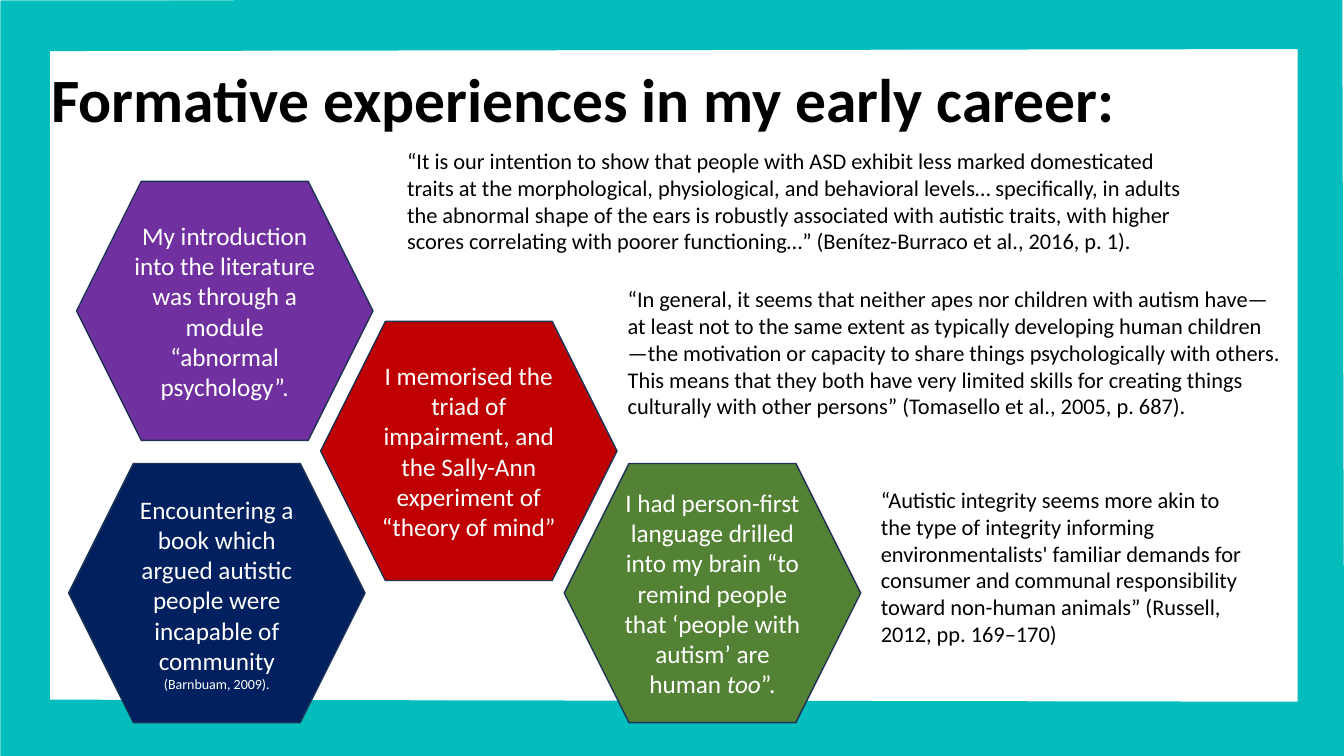
import pptx
import pptx.dml.color
import pptx.enum.shapes
import pptx.enum.text
import pptx.util

Cm = pptx.util.Cm
ANCHOR = pptx.enum.text.MSO_ANCHOR
ALIGN = pptx.enum.text.PP_ALIGN

COLORS = {
    "teal": "03BDBD",
    "purple": "7030A0",
    "red": "C00000",
    "green": "548235",
    "navy": "002060",
    "outline": "1E3256",
    "black": "000000",
    "white": "FFFFFF",
}


def rgb(name):
    return pptx.dml.color.RGBColor.from_string(COLORS[name])


def write(shape, *pieces, size=16, color="black", bold=False, align=ALIGN.LEFT,
          anchor=ANCHOR.TOP, spacing=1.0):
    """Fill a shape with one paragraph; a piece is (text, run format)."""
    frame = shape.text_frame
    frame.word_wrap = True
    frame.vertical_anchor = anchor
    paragraph = frame.paragraphs[0]
    paragraph.alignment = align
    paragraph.line_spacing = spacing
    for text, style in pieces:
        run = paragraph.add_run()
        run.text = text
        run.font.name = "Calibri"
        run.font.size = pptx.util.Pt(style.get("size", size))
        run.font.bold = bold
        run.font.italic = style.get("italic", False)
        run.font.color.rgb = rgb(color)


deck = pptx.Presentation()
deck.slide_width, deck.slide_height = Cm(33.87), Cm(19.05)
slide = deck.slides.add_slide(deck.slide_layouts[6])

# Title
title = slide.shapes.add_textbox(Cm(1.04), Cm(0.74), Cm(29.21), Cm(3.68))
write(title, ("Formative experiences in my early career:", {}),
      size=44, bold=True, anchor=ANCHOR.MIDDLE, spacing=0.9)

# Teal border with a slightly uneven opening
outer_edge = [(0.03, 0.03), (33.81, 0), (33.86, 19.15), (0.03, 19.15)]
opening = [(1.24, 1.27), (1.24, 17.65), (32.72, 17.7), (32.72, 1.22)]
outer_points, opening_points = (
    [(Cm(x), Cm(y)) for x, y in edge] for edge in (outer_edge, opening))
builder = slide.shapes.build_freeform(*outer_points[0])
builder.add_line_segments(outer_points[1:], close=True)
builder.move_to(*opening_points[0])
builder.add_line_segments(opening_points[1:], close=True)
border = builder.convert_to_shape()
border.shadow.inherit = False
border.fill.solid()
border.fill.fore_color.rgb = rgb("teal")
border.line.color.rgb = rgb("teal")
border.line.width = pptx.util.Pt(1)

# Experiences in hexagons: left, top, fill, text pieces
experiences = [
    (1.93, 4.57, "purple",
     [("My introduction into the literature was through a module “abnormal psychology”.", {})]),
    (8.08, 8.1, "red",
     [("I memorised the triad of impairment, and the Sally-Ann experiment of “theory of mind”", {})]),
    (14.22, 11.68, "green",
     [("I had person-first language drilled into my brain “to remind people that "
       "‘people with autism’ are human ", {}),
      ("too", {"italic": True}),
      ("”.", {})]),
    (1.73, 11.68, "navy",
     [("Encountering a book which argued autistic people were incapable of community ", {}),
      ("(Barnbuam, 2009).", {"size": 10})]),
]
for left, top, fill, pieces in experiences:
    experience = slide.shapes.add_shape(
        pptx.enum.shapes.MSO_SHAPE.HEXAGON, Cm(left), Cm(top), Cm(7.47), Cm(6.53))
    experience.shadow.inherit = False
    experience.fill.solid()
    experience.fill.fore_color.rgb = rgb(fill)
    experience.line.color.rgb = rgb("outline")
    experience.line.width = pptx.util.Pt(1)
    write(experience, *pieces, size=18, color="white",
          align=ALIGN.CENTER, anchor=ANCHOR.MIDDLE)

# Quotations: left, top, width, height, text
quotations = [
    (10.01, 3.58, 20.07, 3.0,
     "“It is our intention to show that people with ASD exhibit less marked domesticated "
     "traits at the morphological, physiological, and behavioral levels… specifically, in "
     "adults the abnormal shape of the ears is robustly associated with autistic traits, with "
     "higher scores correlating with poorer functioning…” (Benítez-Burraco et al., 2016, p. 1)."),
    (21.95, 12.12, 9.83, 4.37,
     "“Autistic integrity seems more akin to the type of integrity informing "
     "environmentalists' familiar demands for consumer and communal responsibility toward "
     "non-human animals” (Russell, 2012, pp. 169–170)"),
    (15.57, 7.06, 16.97, 4.37,
     "“In general, it seems that neither apes nor children with autism have—at least not to "
     "the same extent as typically developing human children—the motivation or capacity to "
     "share things psychologically with others. This means that they both have very limited "
     "skills for creating things culturally with other persons” (Tomasello et al., 2005, p. 687)."),
]
for left, top, width, height, text in quotations:
    quotation = slide.shapes.add_textbox(Cm(left), Cm(top), Cm(width), Cm(height))
    write(quotation, (text, {}))

deck.save("out.pptx")
